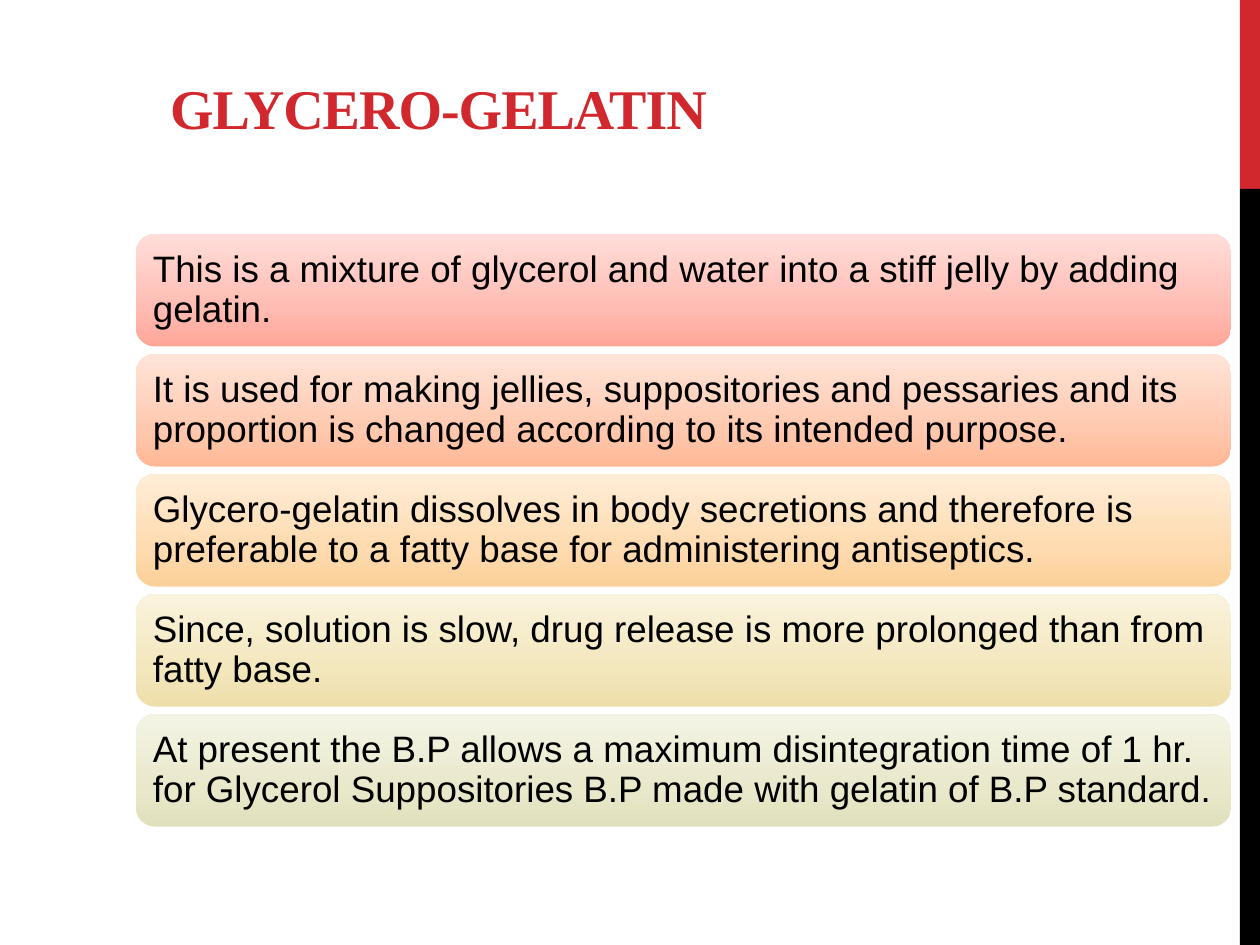
from copy import deepcopy
from dataclasses import dataclass

from pptx import Presentation
from pptx.dml.color import RGBColor
from pptx.enum.shapes import MSO_SHAPE
from pptx.enum.text import MSO_ANCHOR, PP_ALIGN
from pptx.oxml.ns import qn
from pptx.util import Inches, Pt

COLORS = {"red": "D1282E", "black": "000000"}
TITLE = {"name": "Times New Roman", "size": Pt(32), "bold": True}
BODY = {"name": "Arial", "size": Pt(21), "bold": False}
FRAME = {"word_wrap": True, "vertical_anchor": MSO_ANCHOR.MIDDLE}
INSETS = {f"margin_{side}": Inches(0.09)
          for side in ("left", "right", "top", "bottom")}
LEFT, WIDTH, HEIGHT = 1.08, 8.69, 0.89
FIRST, LAST = 1.86, 5.67


@dataclass
class Bar:
    top: float
    height: float
    color: str


@dataclass
class Card:
    text: str
    shades: tuple[str, str, str]  # bottom, middle, top


BARS = [Bar(0, 1.5, "red"), Bar(1.5, 6, "black")]
CARDS = [
    Card("This is a mixture of glycerol and water into a stiff jelly by "
         "adding gelatin.", ("FFA698", "FFBCB3", "FFDED9")),
    Card("It is used for making jellies, suppositories and pessaries and its "
         "proportion is changed according to its intended purpose.",
         ("FFB895", "FFC9B0", "FFE4D8")),
    Card("Glycero-gelatin dissolves in body secretions and therefore is "
         "preferable to a fatty base for administering antiseptics.",
         ("FBD099", "FEDBB0", "FFEDD7")),
    Card("Since, solution is slow, drug release is more prolonged than from "
         "fatty base.", ("EEDEAA", "F3E7BD", "FAF3DE")),
    Card("At present the B.P allows a maximum disintegration time of 1 hr. "
         "for Glycerol Suppositories B.P made with gelatin of B.P standard.",
         ("E1E0BC", "E9E8CB", "F4F4E5")),
]


def apply(target, values: dict) -> None:
    for name, value in values.items():
        setattr(target, name, value)


def style(font, values: dict, color: str) -> None:
    apply(font, values)
    font.color.rgb = RGBColor.from_string(COLORS[color])


def add_shape(slide, kind, left: float, top: float, width: float,
              height: float):
    shape = slide.shapes.add_shape(
        kind, Inches(left), Inches(top), Inches(width), Inches(height))
    shape.shadow.inherit = False
    shape.line.fill.background()
    return shape


def draw_bar(slide, bar: Bar) -> None:
    shape = add_shape(slide, MSO_SHAPE.RECTANGLE, 9.84, bar.top, 0.16,
                      bar.height)
    shape.fill.solid()
    shape.fill.fore_color.rgb = RGBColor.from_string(COLORS[bar.color])


def shade(shape, shades: tuple[str, str, str]) -> None:
    fill = shape.fill
    fill.gradient()
    fill.gradient_angle = 90
    # The default gradient has two stops, so add a middle one
    stops = next(shape._element.spPr.iter(qn("a:gsLst")))
    stops.insert(1, deepcopy(stops[0]))
    for stop, place, color in zip(fill.gradient_stops, (0, 0.35, 1), shades):
        stop.position = place
        stop.color.rgb = RGBColor.from_string(color)


def draw_card(slide, card: Card, top: float) -> None:
    shape = add_shape(slide, MSO_SHAPE.ROUNDED_RECTANGLE, LEFT, top, WIDTH,
                      HEIGHT)
    shade(shape, card.shades)
    frame = shape.text_frame
    apply(frame, FRAME | INSETS)
    para = frame.paragraphs[0]
    para.text = card.text
    apply(para, {"alignment": PP_ALIGN.LEFT, "line_spacing": 0.9})
    style(para.runs[0].font, BODY, "black")


def draw_title(slide, text: str) -> None:
    title = slide.shapes.title
    apply(title, {"left": Inches(1.25), "top": Inches(0.3),
                  "width": Inches(8.52), "height": Inches(0.87)})
    frame = title.text_frame
    frame.text = text
    frame.vertical_anchor = MSO_ANCHOR.BOTTOM
    para = frame.paragraphs[0]
    para.alignment = PP_ALIGN.LEFT
    run = para.runs[0]
    style(run.font, TITLE, "red")
    run._r.get_or_add_rPr().set("spc", "-60")


def main() -> None:
    deck = Presentation()
    deck.slide_width, deck.slide_height = Inches(10), Inches(7.5)
    slide = deck.slides.add_slide(deck.slide_layouts[5])

    # Side stripe
    for bar in BARS:
        draw_bar(slide, bar)

    # Title and evenly spaced cards
    draw_title(slide, "GLYCERO-GELATIN")
    pitch = (LAST - FIRST) / (len(CARDS) - 1)
    for row, card in enumerate(CARDS):
        draw_card(slide, card, FIRST + row * pitch)

    deck.save("out.pptx")


if __name__ == "__main__":
    main()
